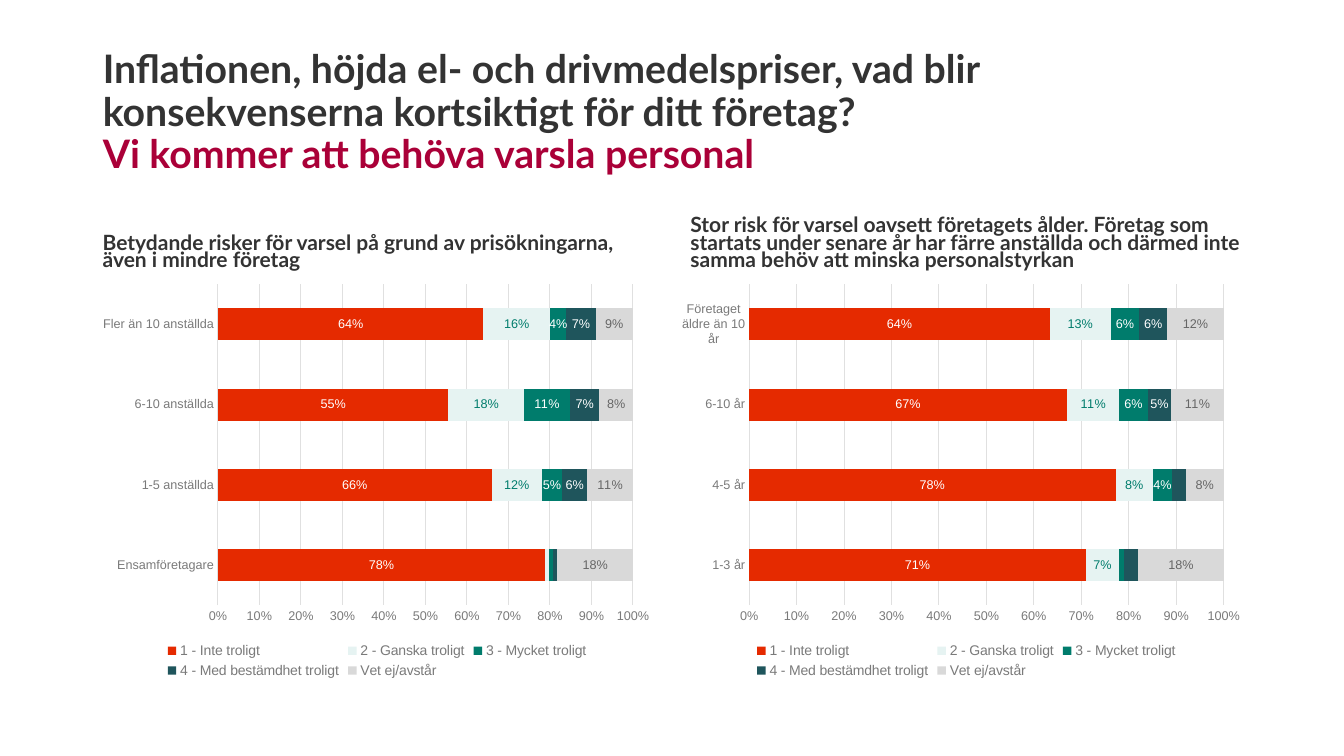
"""Build a slide with two stacked bar charts on the risk of staff layoffs."""
from pptx import Presentation
from pptx.chart.data import CategoryChartData as ChartData
from pptx.dml.color import RGBColor as Rgb
from pptx.enum.chart import XL_CHART_TYPE as ChartKind, XL_LABEL_POSITION as LabelSpot
from pptx.enum.chart import XL_LEGEND_POSITION as LegendSpot, XL_TICK_MARK as Tick
from pptx.enum.text import MSO_ANCHOR as Anchor, MSO_AUTO_SIZE as AutoSize, PP_ALIGN as Align
from pptx.oxml import parse_xml
from pptx.oxml.ns import nsdecls
from pptx.util import Inches, Pt

THEME = {
    "heading": "Lato", "body": "Arial",
    "ink": "333333", "accent": "AA0038", "muted": "7A7A7A", "grid": "E0E0E0",
    "title": 28, "subtitle": 15, "legend": 10, "label": 9,
}
PERCENT = "###0%"
LEFT, TOP, HEADING_HEIGHT, CHART_TOP, CHART_HEIGHT = 0.92, 1.84, 0.9, 2.74, 4.03

ANSWERS = [
    ("1 - Inte troligt", "E52A00", "FFFFFF"),
    ("2 - Ganska troligt", "E6F3F2", "007C6C"),
    ("3 - Mycket troligt", "007C6C", "FFFFFF"),
    ("4 - Med bestämdhet troligt", "1F555C", "FFFFFF"),
    ("Vet ej/avstår", "D9D9D9", "666666"),
]
SMALLEST_LABELLED = 0.04
PANELS = [
    {
        "heading": "Betydande risker för varsel på grund av prisökningarna, även i mindre företag",
        "left": LEFT, "width": 5.64, "plot": (0.22, 0.73),
        "rows": {
            "Ensamföretagare": (0.78, 0.01, 0.01, 0.01, 0.18),
            "1-5 anställda": (0.66, 0.12, 0.05, 0.06, 0.11),
            "6-10 anställda": (0.55, 0.18, 0.11, 0.07, 0.08),
            "Fler än 10 anställda": (0.64, 0.16, 0.04, 0.07, 0.09),
        },
    },
    {
        "heading": "Stor risk för varsel oavsett företagets ålder. Företag som startats under senare år "
                   "har färre anställda och därmed inte samma behöv att minska personalstyrkan",
        "left": 6.75, "width": 5.67, "plot": (0.12, 0.83),
        "rows": {
            "1-3 år": (0.71, 0.07, 0.01, 0.03, 0.18),
            "4-5 år": (0.78, 0.08, 0.04, 0.03, 0.08),
            "6-10 år": (0.67, 0.11, 0.06, 0.05, 0.11),
            "Företaget äldre än 10 år": (0.64, 0.13, 0.06, 0.06, 0.12),
        },
    },
]


def assign(target, **values):
    for name, value in values.items():
        setattr(target, name, value)


def style(font, face, size, color, bold=False):
    assign(font, name=THEME[face], size=Pt(THEME[size]), bold=bold)
    font.color.rgb = Rgb.from_string(color)


deck = Presentation()
assign(deck, slide_width=Inches(13.33), slide_height=Inches(7.5))
page = deck.slides.add_slide(deck.slide_layouts[5])

title = page.shapes.title
assign(title, left=Inches(LEFT), top=Inches(0.4), width=Inches(11.5), height=Inches(1.45))
assign(title.text_frame, word_wrap=True, auto_size=AutoSize.NONE, vertical_anchor=Anchor.MIDDLE)
para = title.text_frame.paragraphs[0]
assign(para, alignment=Align.LEFT, line_spacing=0.9)
question = para.add_run()
question.text = ("Inflationen, höjda el- och drivmedelspriser, vad blir "
                 "konsekvenserna kortsiktigt för ditt företag?")
para.add_line_break()
answer = para.add_run()
answer.text = "Vi kommer att behöva varsla personal"
for span, color in ((question, "ink"), (answer, "accent")):
    style(span.font, "heading", "title", THEME[color], bold=True)

for panel in PANELS:
    left, width = Inches(panel["left"]), Inches(panel["width"])
    box = page.shapes.add_textbox(left, Inches(TOP), width, Inches(HEADING_HEIGHT))
    assign(box.text_frame, word_wrap=True, vertical_anchor=Anchor.BOTTOM)
    para = box.text_frame.paragraphs[0]
    para.line_spacing = 0.7
    span = para.add_run()
    span.text = panel["heading"]
    style(span.font, "heading", "subtitle", THEME["ink"], bold=True)

    data = ChartData(number_format=PERCENT)
    data.categories = list(panel["rows"])
    columns = list(zip(*panel["rows"].values()))
    for (name, _, _), values in zip(ANSWERS, columns):
        data.add_series(name, values)
    chart = page.shapes.add_chart(ChartKind.BAR_STACKED_100, left, Inches(CHART_TOP),
                                  width, Inches(CHART_HEIGHT), data).chart
    assign(chart, has_title=False, has_legend=True)
    style(chart.font, "body", "legend", THEME["ink"])
    assign(chart.legend, position=LegendSpot.BOTTOM, include_in_layout=False)
    style(chart.legend.font, "body", "legend", THEME["muted"])

    for axis in (chart.category_axis, chart.value_axis):
        assign(axis, major_tick_mark=Tick.NONE, minor_tick_mark=Tick.NONE)
        style(axis.tick_labels.font, "body", "label", THEME["muted"])
    scale = chart.value_axis
    assign(scale, minimum_scale=0, maximum_scale=1, major_unit=0.1, has_major_gridlines=True)
    assign(scale.tick_labels, number_format=PERCENT, number_format_is_linked=False)
    scale.format.line.fill.background()
    for line in (chart.category_axis.format.line, scale.major_gridlines.format.line):
        line.width = Pt(0.75)
        line.color.rgb = Rgb.from_string(THEME["grid"])

    plot = chart.plots[0]
    assign(plot, gap_width=150, overlap=100, vary_by_categories=False)
    for series, (_, fill, text), values in zip(plot.series, ANSWERS, columns):
        series.format.fill.solid()
        series.format.fill.fore_color.rgb = Rgb.from_string(fill)
        labels = series.data_labels
        assign(labels, show_value=True, position=LabelSpot.CENTER,
               number_format=PERCENT, number_format_is_linked=False)
        style(labels.font, "body", "label", text)
        hidden = [index for index, value in enumerate(values) if value < SMALLEST_LABELLED]
        for place, index in enumerate(hidden):
            labels._element.insert(place, parse_xml(
                f'<c:dLbl {nsdecls("c")}><c:idx val="{index}"/><c:delete val="1"/></c:dLbl>'))

    plot_left, plot_width = panel["plot"]
    area = chart._chartSpace.chart.plotArea
    for old in area.findall("{*}layout"):
        area.remove(old)
    area.insert(0, parse_xml(
        f'<c:layout {nsdecls("c")}><c:manualLayout><c:layoutTarget val="inner"/>'
        '<c:xMode val="edge"/><c:yMode val="edge"/>'
        f'<c:x val="{plot_left}"/><c:y val="0.02"/><c:w val="{plot_width}"/><c:h val="0.79"/>'
        '</c:manualLayout></c:layout>'))

deck.save("out.pptx")
